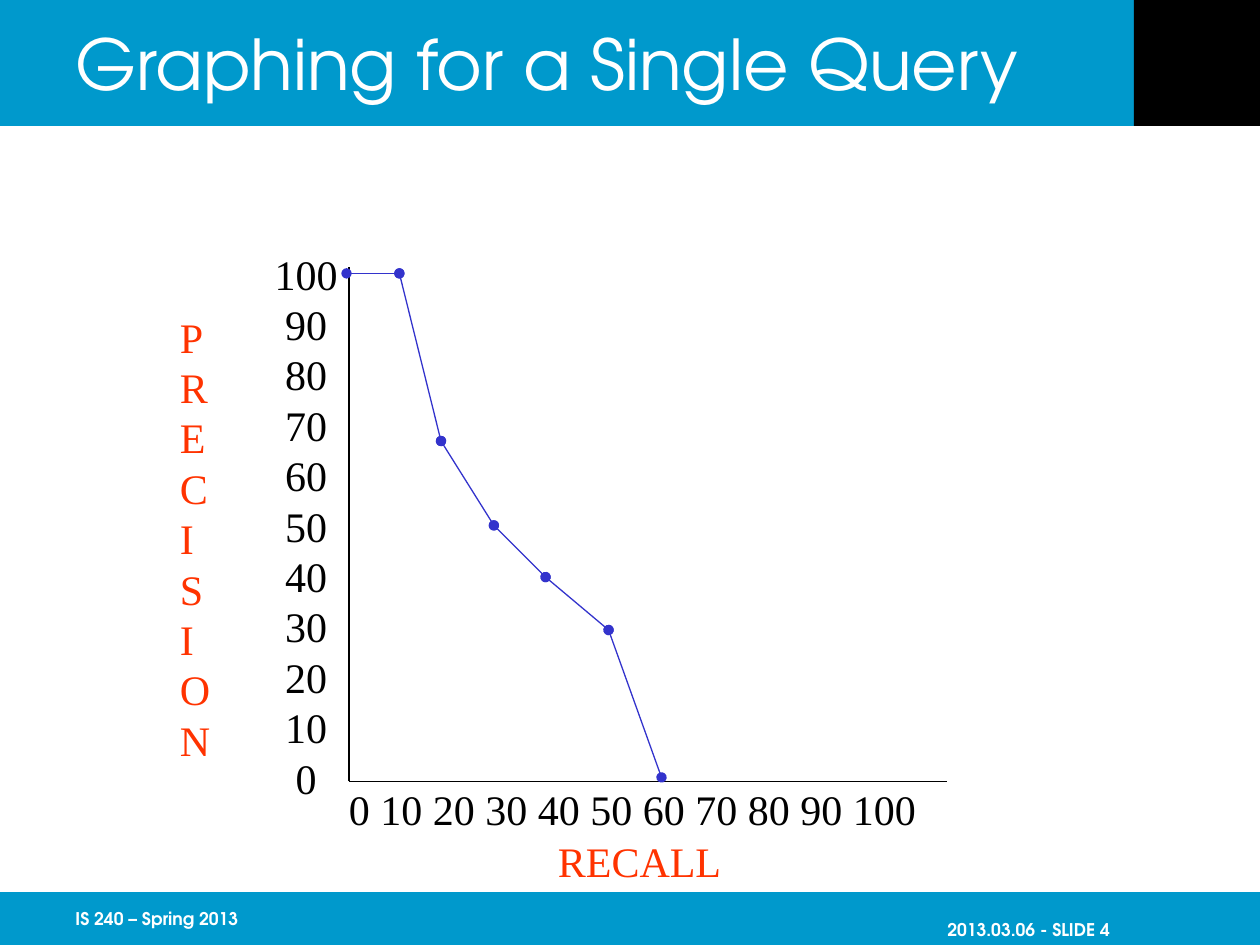
import pptx
import pptx.util
import pptx.dml.color
import pptx.enum.shapes
import pptx.enum.text
import pptx.oxml
from pptx.util import Inches

ANCHOR = pptx.enum.text.MSO_ANCHOR
ALIGN = pptx.enum.text.PP_ALIGN
SHAPE = pptx.enum.shapes.MSO_SHAPE
STRAIGHT = pptx.enum.shapes.MSO_CONNECTOR.STRAIGHT
NAMESPACE = 'xmlns:a="http://schemas.openxmlformats.org/drawingml/2006/main"'


def color(code):
    return pptx.dml.color.RGBColor.from_string(code)


THEME = {
    "band": color("0099CC"),
    "black": color("000000"),
    "curve": color("3333CC"),
    "title": {"name": "TeX Gyre Adventor", "size": pptx.util.Pt(40), "color": color("FFFFFF")},
    "footer": {"name": "TeX Gyre Adventor", "size": pptx.util.Pt(10), "bold": True,
               "color": color("FFFFFF")},
    "tick": {"name": "Times New Roman", "size": pptx.util.Pt(24), "color": color("000000")},
    "axis": {"name": "Times New Roman", "size": pptx.util.Pt(24), "color": color("FF3300")},
}

deck = pptx.Presentation()
deck.slide_width, deck.slide_height = Inches(10), Inches(7.5)
page = deck.slides.add_slide(deck.slide_layouts[6])


def add_text(area, lines, style, wrap=False, anchor=ANCHOR.TOP, align=ALIGN.LEFT):
    box = page.shapes.add_textbox(*map(Inches, area))
    frame = box.text_frame
    frame.word_wrap, frame.vertical_anchor = wrap, anchor
    for number, line in enumerate(lines):
        para = frame.paragraphs[0] if number == 0 else frame.add_paragraph()
        para.alignment = align
        span = para.add_run()
        span.text = line
        for name, value in THEME[style].items():
            if name == "color":
                span.font.color.rgb = value
            else:
                setattr(span.font, name, value)


def add_line(start, end, tint, dots=False):
    line = page.shapes.add_connector(STRAIGHT, *map(Inches, (*start, *end)))
    line.line.color.rgb, line.line.width = tint, pptx.util.Pt(0.75)
    if dots:
        for tag in ("headEnd", "tailEnd"):
            line.line._get_or_add_ln().append(
                pptx.oxml.parse_xml(f'<a:{tag} {NAMESPACE} type="oval"/>'))
    line._element.spPr.append(pptx.oxml.parse_xml(f"<a:effectLst {NAMESPACE}/>"))


# Header and footer bands, black corner
for area, fill in [((0, 0, 10, 1), "band"), ((0, 7.08, 10, 0.42), "band"),
                   ((9, 0, 1, 1), "black")]:
    band = page.shapes.add_shape(SHAPE.RECTANGLE, *map(Inches, area))
    band.shadow.inherit = False
    band.fill.solid()
    band.fill.fore_color.rgb = THEME[fill]
    band.line.fill.background()

# Title and footer text
add_text((0.5, 0, 8.5, 1), ["Graphing for a Single Query"], "title", True, ANCHOR.MIDDLE)
add_text((0.5, 7.08, 2.08, 0.42), ["IS 240 – Spring 2013"], "footer", True, ANCHOR.MIDDLE)
add_text((7.42, 7.24, 2.08, 0.28), ["2013.03.06 - SLIDE 4"], "footer", True, ANCHOR.MIDDLE)

# Axis ticks and names
ticks = [str(value) for value in range(0, 101, 10)]
add_text((2.08, 1.92, 0.7, 4.49), ticks[::-1], "tick", align=ALIGN.CENTER)
add_text((2.67, 6.17, 4.7, 0.5), [" ".join(ticks)], "tick")
add_text((1.33, 2.42, 0.44, 3.69), "PRECISION", "axis")
add_text((4.33, 6.58, 1.5, 0.5), ["RECALL"], "axis")

# Axes
origin = (2.77, 6.2)
for axis_end in [(2.77, 2.12), (7.52, 6.2)]:
    add_line(origin, axis_end, THEME["black"])

# Precision against recall
points = [(2.75, 2.17), (3.17, 2.17), (3.5, 3.5), (3.92, 4.17),
          (4.33, 4.58), (4.83, 5), (5.25, 6.17)]
for start, end in zip(points, points[1:]):
    add_line(start, end, THEME["curve"], dots=True)

deck.save("out.pptx")
